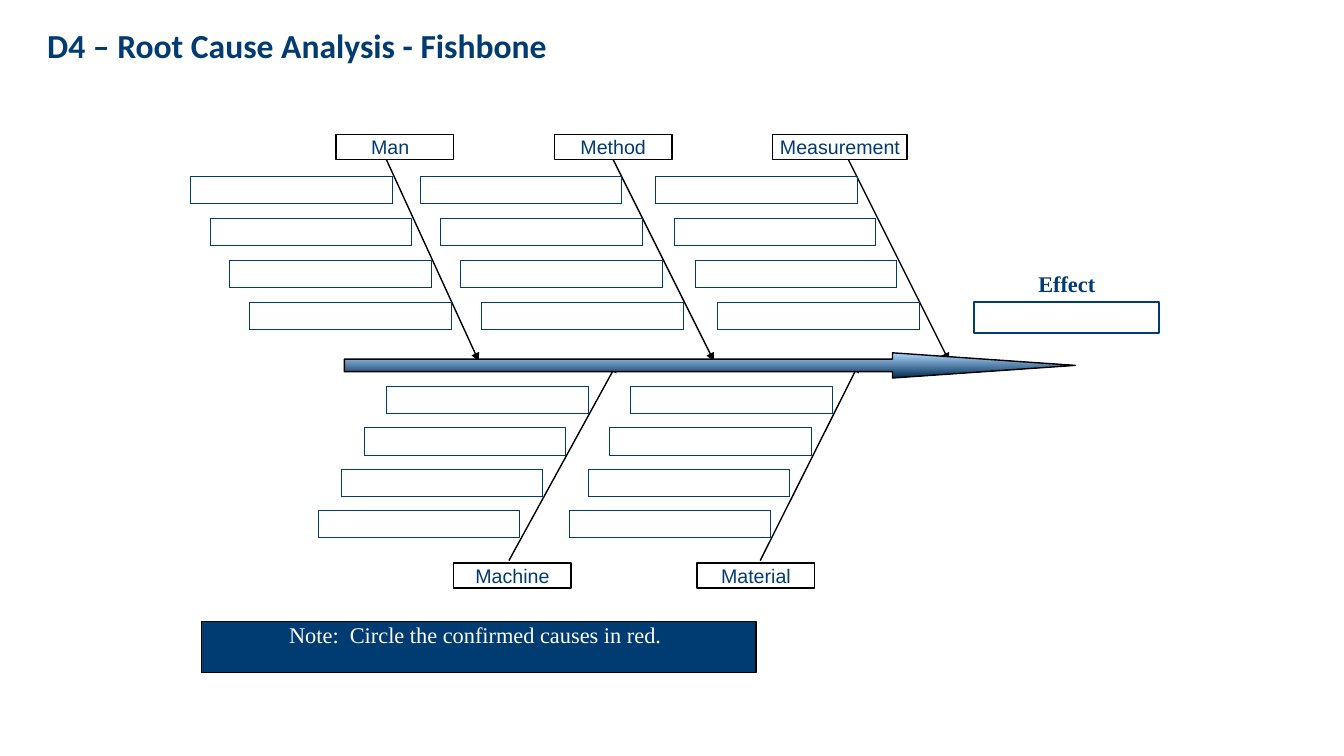
from dataclasses import dataclass

import pptx
import pptx.dml.color
import pptx.enum.dml
import pptx.enum.shapes
import pptx.enum.text
import pptx.oxml.ns
import pptx.util
from lxml import etree

Pt = pptx.util.Pt
RGBColor = pptx.dml.color.RGBColor
SHAPE = pptx.enum.shapes.MSO_SHAPE
ALIGN = pptx.enum.text.PP_ALIGN
ANCHOR = pptx.enum.text.MSO_ANCHOR
qn = pptx.oxml.ns.qn

NAVY = RGBColor(0x00, 0x3B, 0x71)
BLACK = RGBColor(0x00, 0x00, 0x00)
WHITE = RGBColor(0xFF, 0xFF, 0xFF)
SKY = RGBColor(0xB0, 0xD9, 0xFF)
DEEP = RGBColor(0x00, 0x2C, 0x55)


@dataclass(frozen=True)
class Box:
    left: float
    top: float
    width: float
    height: float


@dataclass(frozen=True)
class Side:
    label_top: float
    line_start: float
    line_end: float
    cause_top: float
    cause_pitch: float


@dataclass(frozen=True)
class Bone:
    label: str
    left: float
    width: float
    start_x: float
    end_x: float
    cause_lefts: tuple[float, ...]
    side: Side
    right_inset: float = 0


UPPER = Side(96, 114, 258, 126, 30)
LOWER = Side(402, 400.5, 260, 276, 29.5)

BONES = [
    Bone("Man", 240, 84, 276, 342, (136, 150, 164, 178), UPPER, 6.5),
    Bone("Method", 396, 84, 438, 510, (300, 314.5, 329, 344), UPPER),
    Bone("Measurement", 552, 96, 606, 678, (468, 481.5, 496.5, 512.5), UPPER),
    Bone("Machine", 324, 84, 363.5, 440.5, (276, 260, 243.5, 227), LOWER),
    Bone("Material", 498, 84, 543, 613.5, (450.5, 435.5, 420, 406.5), LOWER),
]


def write_text(sp, text: str, *, size: float, font: str, color: RGBColor = NAVY,
               bold: bool = False, align=ALIGN.CENTER, anchor=ANCHOR.MIDDLE,
               wrap: bool = False, insets=(0, 0, 0, 0)) -> None:
    tf = sp.text_frame
    tf.auto_size = pptx.enum.text.MSO_AUTO_SIZE.NONE
    tf.word_wrap = wrap
    tf.vertical_anchor = anchor
    tf.margin_left, tf.margin_top, tf.margin_right, tf.margin_bottom = map(Pt, insets)
    p = tf.paragraphs[0]
    p.alignment = align
    r = p.add_run()
    r.text = text
    r.font.name = font
    r.font.size = Pt(size)
    r.font.bold = bold
    r.font.color.rgb = color


def place(sp, box: Box) -> None:
    sp.left, sp.top = Pt(box.left), Pt(box.top)
    sp.width, sp.height = Pt(box.width), Pt(box.height)


def add_box(slide, box: Box, *, color: RGBColor = BLACK, weight: float = 1,
            fill: RGBColor | None = None, kind=SHAPE.RECTANGLE):
    sp = slide.shapes.add_shape(kind, Pt(box.left), Pt(box.top),
                                Pt(box.width), Pt(box.height))
    sp.shadow.inherit = False
    if fill is None:
        sp.fill.background()
    else:
        sp.fill.solid()
        sp.fill.fore_color.rgb = fill
    sp.line.color.rgb = color
    sp.line.width = Pt(weight)
    return sp


def add_bone(slide, bone: Bone) -> None:
    side = bone.side
    label = add_box(slide, Box(bone.left, side.label_top, bone.width, 18))
    write_text(label, bone.label, size=14, font="Arial",
               insets=(0, 0, bone.right_inset, 0))

    line = slide.shapes.add_connector(
        pptx.enum.shapes.MSO_CONNECTOR.STRAIGHT,
        Pt(bone.start_x), Pt(side.line_start), Pt(bone.end_x), Pt(side.line_end))
    if bone.start_x == bone.left + bone.width / 2:
        line.begin_connect(label, 2 if side is UPPER else 0)
    line.line.color.rgb = BLACK
    line.line.width = Pt(1)
    etree.SubElement(line.line._get_or_add_ln(), qn("a:tailEnd"), type="triangle")
    etree.SubElement(line._element.spPr, qn("a:effectLst"))

    for i, left in enumerate(bone.cause_lefts):
        top = side.cause_top + i * side.cause_pitch
        cause = add_box(slide, Box(left, top, 144, 19.5), color=NAVY, weight=0.25)
        cause.line.dash_style = pptx.enum.dml.MSO_LINE.ROUND_DOT


def add_spine(slide) -> None:
    sp = add_box(slide, Box(246, 252, 522, 18), kind=SHAPE.RIGHT_ARROW)
    sp.adjustments[0] = 0.5
    sp.adjustments[1] = 7.25
    sp.fill.gradient()
    sp.fill.gradient_angle = 270
    for stop, color in zip(sp.fill.gradient_stops, (SKY, DEEP)):
        stop.color.rgb = color


def main() -> None:
    prs = pptx.Presentation()
    prs.slide_width, prs.slide_height = Pt(960), Pt(540)
    slide = prs.slides.add_slide(prs.slide_layouts[5])

    title = slide.shapes.title
    place(title, Box(26.5, 14.5, 809, 56))
    write_text(title, "D4 – Root Cause Analysis - Fishbone", size=24, font="Calibri",
               bold=True, align=ALIGN.LEFT, anchor=ANCHOR.TOP, wrap=True,
               insets=(7.2, 3.6, 7.2, 3.6))

    for bone in BONES:
        add_bone(slide, bone)
    add_spine(slide)

    effect = slide.shapes.add_textbox(Pt(714), Pt(189.5), Pt(96), Pt(26.5))
    write_text(effect, "Effect", size=16, font="Times New Roman", bold=True,
               anchor=ANCHOR.TOP, wrap=True, insets=(7.2, 3.6, 7.2, 3.6))
    add_box(slide, Box(696, 216, 132, 22), color=NAVY, weight=1.5)

    note = add_box(slide, Box(144, 444, 396, 36.5), fill=NAVY)
    write_text(note, "Note:  Circle the confirmed causes in red.", size=16,
               font="Times New Roman", color=WHITE, anchor=ANCHOR.TOP,
               insets=(0, 0, 5, 0))

    prs.save("out.pptx")


if __name__ == "__main__":
    main()
